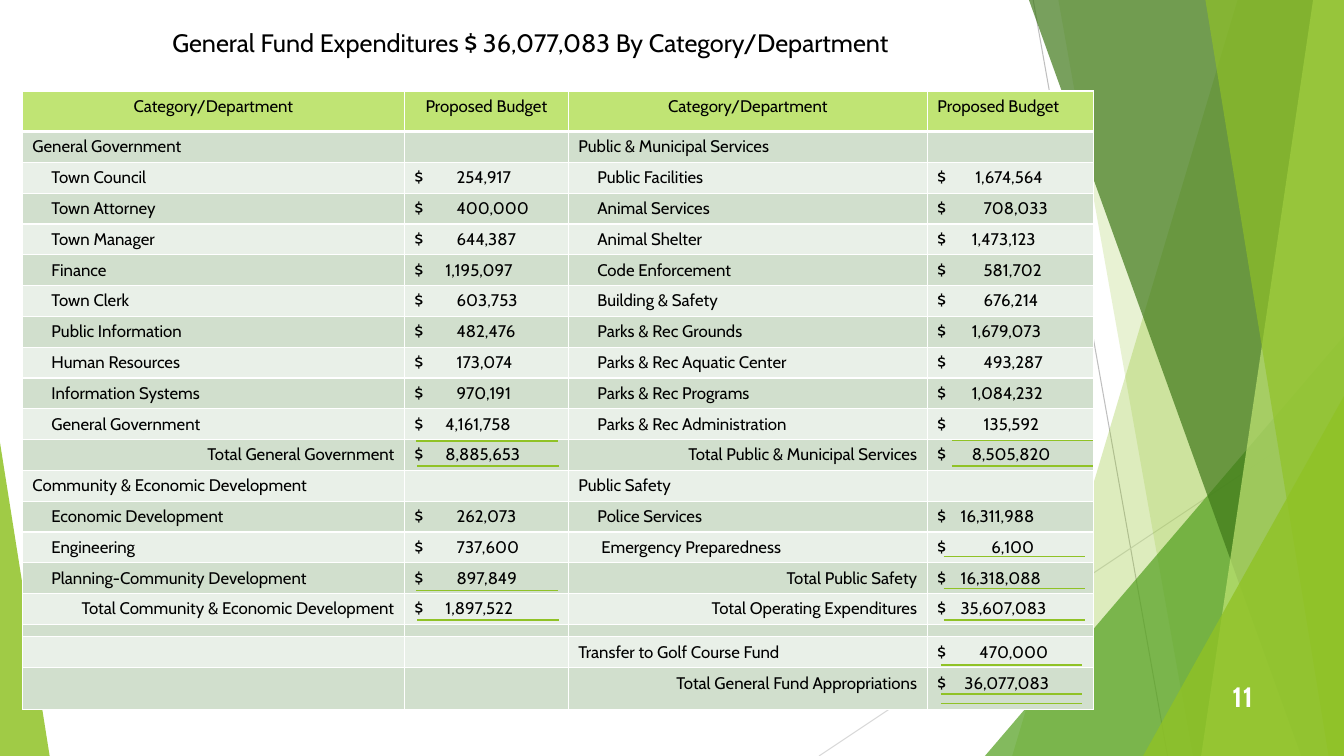
from lxml import etree
from pptx import Presentation
from pptx.dml.color import RGBColor
from pptx.enum import shapes, text
from pptx.oxml.ns import qn
from pptx.util import Pt

WIDE, HIGH = 960, 540
FONT = "Cabin"
HUES = {
    "green": "90C226", "leaf": "54A021", "dark": "3F7819", "lime": "C0E474",
    "sage": "D1DFCD", "pale": "E9F0E8", "white": "FFFFFF", "black": "000000",
    "grey": "BFBFBF", "mist": "D9D9D9",
}
LEFT, MID, RIGHT = text.PP_ALIGN.LEFT, text.PP_ALIGN.CENTER, text.PP_ALIGN.RIGHT

HEADS = [("Category/Department", MID), ("Proposed Budget", MID),
         ("Category/Department", MID), ("Proposed Budget", LEFT)]
ROWS = [
    ("General Government", "", "Public & Municipal Services", ""),
    ("Town Council", "254,917", "Public Facilities", "1,674,564"),
    ("Town Attorney", "400,000", "Animal Services", "708,033"),
    ("Town Manager", "644,387", "Animal Shelter", "1,473,123"),
    ("Finance", "1,195,097", "Code Enforcement", "581,702"),
    ("Town Clerk", "603,753", "Building & Safety", "676,214"),
    ("Public Information", "482,476", "Parks & Rec Grounds", "1,679,073"),
    ("Human Resources", "173,074", "Parks & Rec Aquatic Center", "493,287"),
    ("Information Systems", "970,191", "Parks & Rec Programs", "1,084,232"),
    ("General Government", "4,161,758", "Parks & Rec Administration", "135,592"),
    ("Total General Government", "8,885,653",
     "Total Public & Municipal Services", "8,505,820"),
    ("Community & Economic Development", "", "Public Safety", ""),
    ("Economic Development", "262,073", "Police Services", "16,311,988"),
    ("Engineering", "737,600", "Emergency Preparedness", "6,100"),
    ("Planning-Community Development", "897,849", "Total Public Safety", "16,318,088"),
    ("Total Community & Economic Development", "1,897,522",
     "Total Operating Expenditures", "35,607,083"),
    ("", "", "", ""),
    ("", "", "Transfer to Golf Course Fund", "470,000"),
    ("", "", "Total General Fund Appropriations", "36,077,083"),
]
COLS = [273, 117, 256.5, 118.5]
TALL = [29] + [22] * 16 + [9, 22, 30]

# Distance from the dollar sign to the figure, by length of the figure
TABS = {1: {7: 30, 9: 22}, 3: {5: 38.5, 7: 33, 9: 24.5, 10: 16.5}}
ODD_TABS = {"1,674,564": 27, "470,000": 30, "36,077,083": 19.25}
INDENT = 13.6
ODD_INDENTS = {"Emergency Preparedness": 16.5, "Transfer to Golf Course Fund": 0}

# Rules under figures: left end, height, weight
RULES = [
    (297.5, 315, 1), (298, 332.75, 1), (297.5, 422, 1), (298, 442.75, 1),
    (680, 314.75, 1), (680, 332.75, 1), (674, 397.5, 1), (674, 420.5, 1),
    (672, 475, 1), (674, 442.75, 1.25), (672, 502.5, 1.25), (672, 496, 1.25),
]
RULE = 101


def rgb(hue):
    return RGBColor.from_string(HUES[hue])


def put(frame, words, size=12, hue="black", bold=False, align=LEFT, tab=None):
    """Write one paragraph; an empty one keeps its size."""
    para = frame.paragraphs[0]
    para.alignment = align
    if not words:
        etree.SubElement(para._p, qn("a:endParaRPr"), sz=str(size * 100))
        return
    if tab:
        stops = etree.SubElement(para._p.get_or_add_pPr(), qn("a:tabLst"))
        etree.SubElement(stops, qn("a:tab"), pos=str(Pt(tab)), algn="l")
    run = para.add_run()
    run.text = words
    font = run.font
    font.name, font.size, font.bold = FONT, Pt(size), bold
    font.color.rgb = rgb(hue)


def label(slide, box, words, anchor=text.MSO_ANCHOR.TOP, **style):
    frame = slide.shapes.add_textbox(*map(Pt, box)).text_frame
    frame.word_wrap = True
    frame.vertical_anchor = anchor
    put(frame, words, **style)


def line(slide, start, end, hue, width):
    item = slide.shapes.add_connector(
        shapes.MSO_CONNECTOR.STRAIGHT, *map(Pt, start + end))
    item.line.color.rgb = rgb(hue)
    item.line.width = Pt(width)
    etree.SubElement(item._element.spPr, qn("a:effectLst"))


def tint(shape, hue, alpha):
    """Fill without outline or shadow, at a percentage of opacity."""
    shape.shadow.inherit = False
    shape.line.fill.background()
    shape.fill.solid()
    shape.fill.fore_color.rgb = rgb(hue)
    color = shape._element.spPr.find(qn("a:solidFill"))[0]
    etree.SubElement(color, qn("a:alpha"), val=str(alpha * 1000))


def band(slide, top, base, hue, alpha):
    """Full-height band from a slanted left side to the right slide edge."""
    form = slide.shapes.build_freeform(Pt(top), 0)
    corners = [(WIDE, 0), (WIDE, HIGH), (base, HIGH)]
    form.add_line_segments([(Pt(x), Pt(y)) for x, y in corners])
    tint(form.convert_to_shape(), hue, alpha)


def wedge(slide, box, apex, hue, alpha):
    shape = slide.shapes.add_shape(
        shapes.MSO_SHAPE.ISOSCELES_TRIANGLE, *map(Pt, box))
    shape.adjustments[0] = apex
    tint(shape, hue, alpha)


def edge(cell, base):
    """White borders, with a chosen weight at the bottom."""
    props = cell._tc.get_or_add_tcPr()
    for spot, (side, width) in enumerate(zip("LRTB", (1, 1, 1, base))):
        mark = etree.Element(qn(f"a:ln{side}"), w=str(Pt(width)))
        fill = etree.SubElement(mark, qn("a:solidFill"))
        etree.SubElement(fill, qn("a:srgbClr"), val=HUES["white"])
        props.insert(spot, mark)


def paint(cell, hue, base=1):
    cell.fill.solid()
    cell.fill.fore_color.rgb = rgb(hue)
    edge(cell, base)


def entry(cell, row, col):
    """Write a department name or its amount."""
    words = row[col]
    if not any(row):
        cell.margin_top = cell.margin_bottom = 0
        put(cell.text_frame, "", size=5)
    elif not words:
        put(cell.text_frame, "")
    elif col in TABS:
        tab = ODD_TABS.get(words, TABS[col][len(words)])
        put(cell.text_frame, f"$\t{words}", tab=tab)
    elif words.startswith("Total"):
        put(cell.text_frame, words, align=RIGHT)
    else:
        if row[col + 1]:
            cell.margin_left = Pt(7.2 + ODD_INDENTS.get(words, INDENT))
        put(cell.text_frame, words)


def budget(slide):
    box = map(Pt, (16, 65, sum(COLS), sum(TALL)))
    table = slide.shapes.add_table(len(TALL), len(COLS), *box).table
    for col, width in zip(table.columns, COLS):
        col.width = Pt(width)
    for row, height in zip(table.rows, TALL):
        row.height = Pt(height)
    for col, (words, align) in enumerate(HEADS):
        cell = table.cell(0, col)
        paint(cell, "lime", 3)
        put(cell.text_frame, words, align=align)
    for num, row in enumerate(ROWS, 1):
        for col in range(len(COLS)):
            cell = table.cell(num, col)
            paint(cell, "sage" if num % 2 else "pale", 3 if num == 0 else 1)
            entry(cell, row, col)


def decor(slide):
    line(slide, (738, 0), (834, HIGH), "grey", 0.75)
    line(slide, (WIDE, 290), (585, HIGH), "mist", 0.75)
    band(slide, 884, 723, "green", 30)
    band(slide, 756, 852, "green", 20)
    wedge(slide, (703.5, 240, 256.5, 300), 1, "leaf", 72)
    band(slide, 735, 929.5, "dark", 70)
    band(slide, 938, 858, "lime", 70)
    band(slide, 861, 949, "green", 65)
    wedge(slide, (816.5, 283, 143.5, 257), 1, "green", 80)
    wedge(slide, (0, 316, 35.5, 224), 0, "green", 85)


def main():
    deck = Presentation()
    deck.slide_width, deck.slide_height = Pt(WIDE), Pt(HIGH)
    slide = deck.slides.add_slide(deck.slide_layouts[6])
    decor(slide)
    budget(slide)
    label(slide, (116, 16, 600, 29),
          "General Fund Expenditures $ 36,077,083 By Category/Department", size=18)
    for left, top, width in RULES:
        line(slide, (left, top), (left + RULE, top), "green", width)
    label(slide, (848, 483, 54, 29), "11", anchor=text.MSO_ANCHOR.MIDDLE,
          size=20, hue="white", bold=True, align=RIGHT)
    deck.save("out.pptx")


if __name__ == "__main__":
    main()
